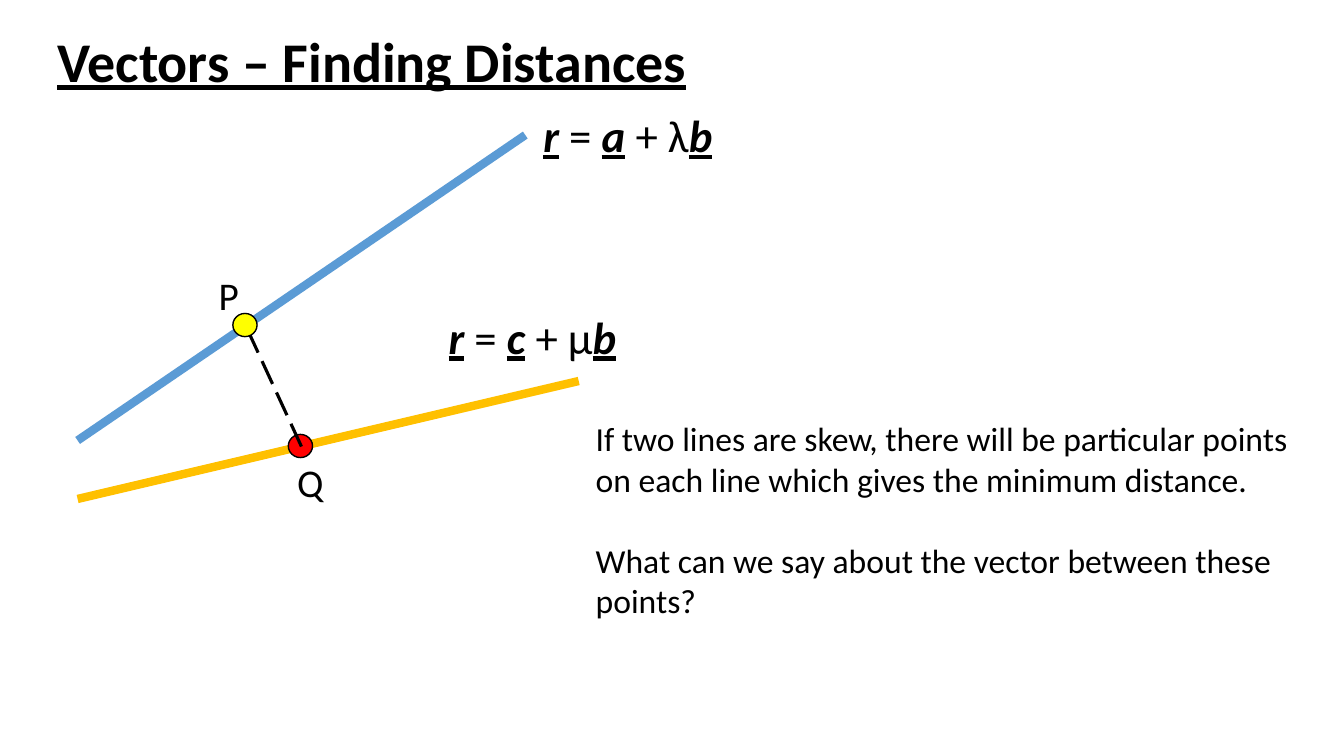
from dataclasses import dataclass

from lxml import etree
from pptx import Presentation
from pptx import util as u
from pptx.dml.color import RGBColor
from pptx.enum import dml, shapes, text
from pptx.oxml import ns


@dataclass(frozen=True)
class Theme:
    font: str = "Calibri"
    ink: str = "000000"
    upper_line: str = "5B9BD5"
    lower_line: str = "FFC000"
    point_p: str = "FFFF00"
    point_q: str = "FF0000"
    title: int = 40
    equation: int = 32
    label: int = 28
    body: int = 24


THEME = Theme()
PLAIN = ""  # run styles are any of the letters b, i, u


def add_text(s, box, paragraphs, size, wrap=False, gap=0):
    """Each paragraph is a list of (wording, style) runs."""
    tf = s.shapes.add_textbox(*map(u.Inches, box)).text_frame
    tf.word_wrap = wrap
    tf.auto_size = text.MSO_AUTO_SIZE.SHAPE_TO_FIT_TEXT
    for i, runs in enumerate(paragraphs):
        p = tf.paragraphs[0] if i == 0 else tf.add_paragraph()
        p.space_before = u.Pt(gap if i else 0)
        for wording, style in runs:
            r = p.add_run()
            r.text = wording
            r.font.name = THEME.font
            r.font.size = u.Pt(size)
            r.font.color.rgb = RGBColor.from_string(THEME.ink)
            r.font.bold = "b" in style
            r.font.italic = "i" in style
            r.font.underline = "u" in style


def add_line(s, start, end, color, width, dash=None):
    line = s.shapes.add_connector(
        shapes.MSO_CONNECTOR.STRAIGHT, *map(u.Inches, start + end))
    line.line.color.rgb = RGBColor.from_string(color)
    line.line.width = u.Pt(width)
    if dash:
        line.line.dash_style = dash
    etree.SubElement(line._element.spPr, ns.qn("a:effectLst"))


def add_point(s, left, top, color):
    sp = s.shapes.add_shape(shapes.MSO_SHAPE.OVAL, *map(u.Inches, (left, top, 0.24, 0.23)))
    sp.shadow.inherit = False
    sp.fill.solid()
    sp.fill.fore_color.rgb = RGBColor.from_string(color)
    sp.line.color.rgb = RGBColor.from_string(THEME.ink)
    sp.line.width = u.Pt(1)


def add_equation(s, box, position, parameter):
    runs = [("r", "biu"), (" = ", PLAIN), (position, "biu"),
            (f" + {parameter}", PLAIN), ("b", "biu")]
    add_text(s, box, [runs], THEME.equation)


def add_title(s, box):
    add_text(s, box, [[("Vectors – Finding Distances", "bu")]], THEME.title)


def add_diagram(s, box):
    x, y, w, h = box

    # Skew lines, both starting at the left edge
    add_line(s, (x, y + h), (x + w, y + 2.44), THEME.lower_line, 6)
    add_line(s, (x, y + 3.03), (x + 4.44, y), THEME.upper_line, 6)

    # Closest points and the segment joining them
    add_point(s, x + 2.09, y + 2.97, THEME.point_q)
    add_line(s, (x + 2.22, y + 3.09), (x + 1.68, y + 1.92), THEME.ink, 2.25,
             dml.MSO_LINE.LONG_DASH)
    add_point(s, x + 1.54, y + 1.77, THEME.point_p)

    # Line equations
    add_equation(s, (x + 4.52, y - 0.32, 1.9, 0.64), "a", "λ")
    add_equation(s, (x + 3.58, y + 1.68, 1.88, 0.64), "c", "μ")

    # Point labels
    add_text(s, (x + 1.3, y + 1.3, 0.41, 0.57), [[("P", PLAIN)]], THEME.label)
    add_text(s, (x + 2.08, y + 3.16, 0.47, 0.57), [[("Q", PLAIN)]], THEME.label)


def add_question(s, box):
    wording = [
        "If two lines are skew, there will be particular points on each line "
        "which gives the minimum distance.",
        "What can we say about the vector between these points?",
    ]
    add_text(s, box, [[(line, PLAIN)] for line in wording], THEME.body, wrap=True, gap=29)


def main():
    prs = Presentation()
    prs.slide_width, prs.slide_height = u.Inches(13.33), u.Inches(7.5)
    s = prs.slides.add_slide(prs.slide_layouts[6])
    add_title(s, (0.47, 0.21, 6.51, 0.77))
    add_diagram(s, (0.77, 1.34, 4.97, 3.61))
    add_question(s, (5.81, 4.1, 7.35, 2.12))
    prs.save("out.pptx")


if __name__ == "__main__":
    main()
